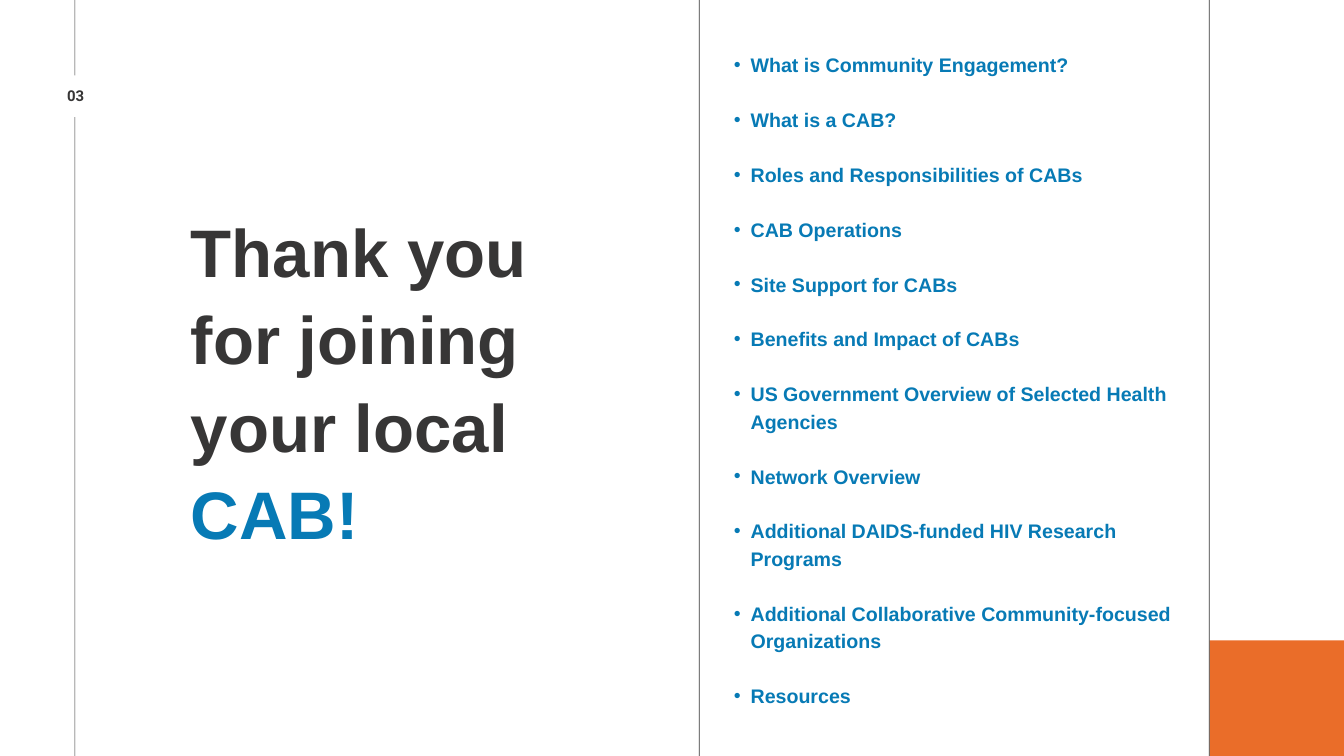
from dataclasses import dataclass

from lxml import etree
from pptx import Presentation
from pptx import util as u
from pptx.dml.color import RGBColor
from pptx.enum import shapes, text
from pptx.oxml import ns

Inches = u.Inches


@dataclass(frozen=True)
class Theme:
    ink: str = "373636"
    blue: str = "077AB5"
    orange: str = "EA6D29"
    paper: str = "FFFFFF"
    font: str = "Arial"
    number_font: str = "Roboto"
    title_size: float = 72
    topic_size: float = 21
    number_size: float = 16


THEME = Theme()
WIDTH, HEIGHT = 20, 11.25
RULE_WIDTH = 0.01
TOPICS = [
    "What is Community Engagement?",
    "What is a CAB?",
    "Roles and Responsibilities of CABs",
    "CAB Operations",
    "Site Support for CABs",
    "Benefits and Impact of CABs",
    "US Government Overview of Selected Health Agencies",
    "Network Overview",
    "Additional DAIDS-funded HIV Research Programs",
    "Additional Collaborative Community-focused Organizations",
    "Resources",
]


def add_block(parent, box, color):
    block = parent.add_shape(shapes.MSO_SHAPE.RECTANGLE, *map(Inches, box))
    block.shadow.inherit = False
    block.fill.solid()
    block.fill.fore_color.rgb = RGBColor.from_string(color)
    block.line.fill.background()


def add_rule(parent, left):
    add_block(parent, (left, 0, RULE_WIDTH, HEIGHT), THEME.ink)


def set_bullet(paragraph):
    paragraph.level = 1
    properties = paragraph._p.get_or_add_pPr()
    properties.set("marL", str(Inches(0.5)))
    properties.set("indent", str(Inches(-0.25)))
    etree.SubElement(properties, ns.qn("a:buFont")).set("typeface", THEME.font)
    etree.SubElement(properties, ns.qn("a:buChar")).set("char", "•")


def add_text(parent, box, paragraphs, *, size, leading, font=THEME.font,
             align=text.PP_ALIGN.LEFT, bullet=False, gap=0):
    """Each paragraph is a list of (wording, color) runs."""
    frame = parent.add_textbox(*map(Inches, box)).text_frame
    frame.word_wrap = True
    frame.auto_size = text.MSO_AUTO_SIZE.SHAPE_TO_FIT_TEXT
    frame.margin_left = frame.margin_top = 0
    frame.margin_right = frame.margin_bottom = 0
    for index, runs in enumerate(paragraphs):
        paragraph = frame.add_paragraph() if index else frame.paragraphs[0]
        if bullet:
            set_bullet(paragraph)
        paragraph.alignment = align
        paragraph.line_spacing = u.Pt(size * leading)
        if index and gap:
            paragraph.space_before = u.Pt(gap)
        for wording, color in runs:
            run = paragraph.add_run()
            run.text = wording
            run.font.name = font
            run.font.size = u.Pt(size)
            run.font.bold = True
            run.font.color.rgb = RGBColor.from_string(color)


def add_page_number(slide, box, number):
    left, top, width, height = box
    badge = slide.shapes.add_group_shape().shapes
    add_block(badge, box, THEME.paper)
    add_text(badge, (left + 0.07, top + 0.19, width - 0.13, height - 0.36),
             [[(number, THEME.ink)]], size=THEME.number_size, leading=1.1,
             font=THEME.number_font, align=text.PP_ALIGN.CENTER)


def add_title(slide, box):
    add_text(slide.shapes, box,
             [[("Thank you for joining your local ", THEME.ink), ("CAB!", THEME.blue)]],
             size=THEME.title_size, leading=1.3)


def add_topics(slide, box):
    leading = 1.4
    add_text(slide.shapes, box, [[(topic, THEME.blue)] for topic in TOPICS],
             size=THEME.topic_size, leading=leading, bullet=True,
             gap=THEME.topic_size * leading)


def build_thank_you(slide):
    # Left rule, interrupted by the page number
    add_rule(slide.shapes, 1.11)
    add_page_number(slide, (0.69, 1.12, 0.86, 0.62), "03")

    # Column divider and corner accent
    add_rule(slide.shapes, 10.4)
    add_block(slide.shapes, (18, 9.53, WIDTH - 18, HEIGHT - 9.53), THEME.orange)

    # Message and list of topics
    add_title(slide, (2.84, 3.03, 5.65, 5.13))
    add_topics(slide, (10.67, 0.73, 7.06, 9.74))

    # Right rule
    add_rule(slide.shapes, 17.99)


def main():
    deck = Presentation()
    deck.slide_width, deck.slide_height = Inches(WIDTH), Inches(HEIGHT)
    slide = deck.slides.add_slide(deck.slide_layouts[6])
    slide.background.fill.solid()
    slide.background.fill.fore_color.rgb = RGBColor.from_string(THEME.paper)
    build_thank_you(slide)
    deck.save("out.pptx")


if __name__ == "__main__":
    main()
